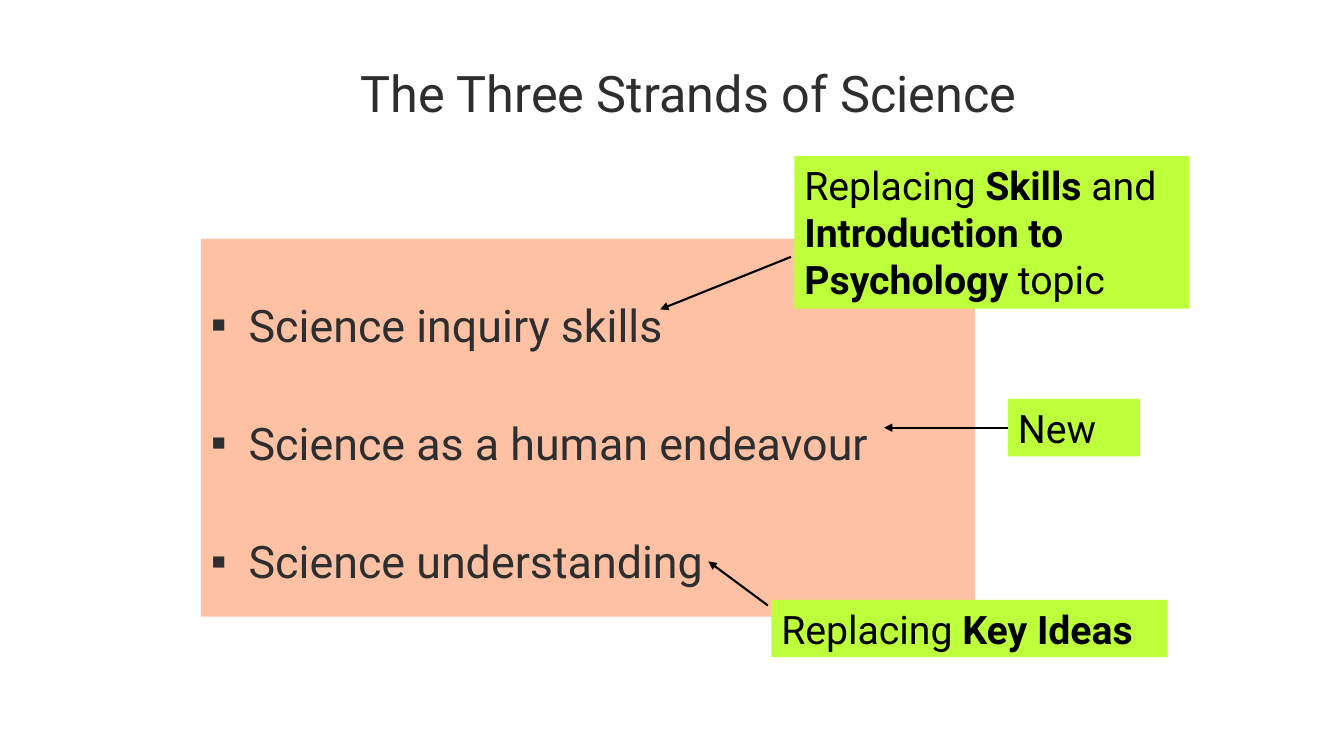
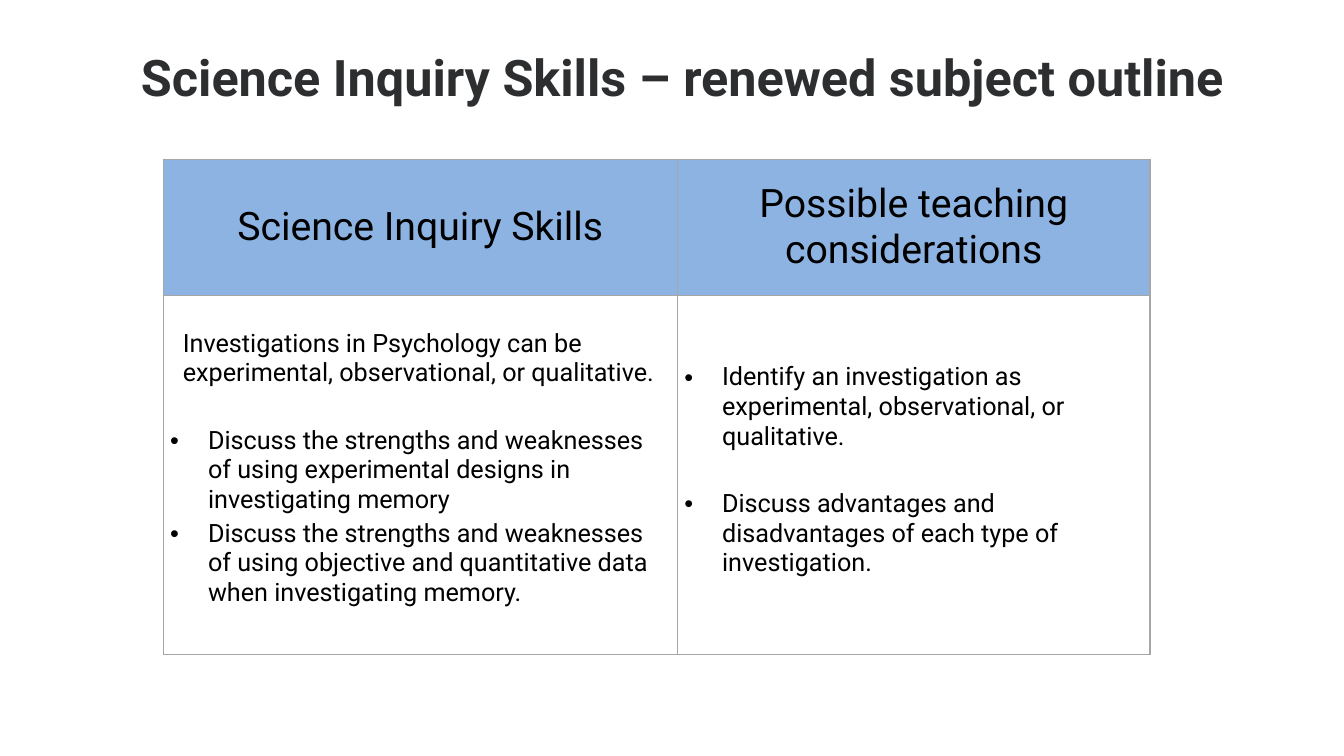
from lxml import etree
from pptx import Presentation
from pptx.dml.color import RGBColor
from pptx.enum.shapes import MSO_CONNECTOR, MSO_SHAPE
from pptx.enum.text import MSO_ANCHOR, MSO_AUTO_SIZE, PP_ALIGN
from pptx.oxml.ns import qn
from pptx.util import Pt

RECTANGLE = MSO_SHAPE.RECTANGLE
STRAIGHT = MSO_CONNECTOR.STRAIGHT
MIDDLE, TOP = MSO_ANCHOR.MIDDLE, MSO_ANCHOR.TOP
LEFT, CENTER = PP_ALIGN.LEFT, PP_ALIGN.CENTER
FIT_SHAPE = MSO_AUTO_SIZE.SHAPE_TO_FIT_TEXT
LEFT_SIDE = 1

FONT = "Roboto"
COLORS = {
    "heading": "2D2E2F",
    "text": "000000",
    "panel": "FFC1A3",
    "callout": "BDFF3B",
    "header": "8DB3E2",
    "border": "A6A6A6",
}
BULLET_INDENT = 27


def write(para, text, size, color, bullet=None, **formats):
    """Fill a paragraph; text between asterisks is bold."""
    if bullet:
        properties = para._p.get_or_add_pPr()
        properties.set("marL", str(Pt(BULLET_INDENT)))
        properties.set("indent", str(-Pt(BULLET_INDENT)))
        etree.SubElement(properties, qn("a:buFont"), typeface="Arial")
        etree.SubElement(properties, qn("a:buChar"), char=bullet)
    for name, value in formats.items():
        setattr(para, name, value)
    for number, part in enumerate(text.split("*")):
        if part:
            span = para.add_run()
            span.text = part
            span.font.name = FONT
            span.font.size = Pt(size)
            span.font.bold = number % 2 == 1
            span.font.color.rgb = RGBColor.from_string(COLORS[color])


def add_panel(page, left, top, width, height, color):
    panel = page.shapes.add_shape(RECTANGLE, Pt(left), Pt(top), Pt(width), Pt(height))
    panel.shadow.inherit = False
    panel.fill.solid()
    panel.fill.fore_color.rgb = RGBColor.from_string(COLORS[color])
    panel.line.fill.background()
    panel.text_frame.word_wrap = True
    panel.text_frame.vertical_anchor = TOP
    return panel


deck = Presentation()
deck.slide_width, deck.slide_height = Pt(960), Pt(540)

# Pages and titles
titles = [
    ("The Three Strands of Science", 72, 35, 840, CENTER),
    ("*Science Inquiry Skills – renewed subject outline*", 93.6, 23, 819, LEFT),
]
pages = []
for text, left, top, width, alignment in titles:
    page = deck.slides.add_slide(deck.slide_layouts[6])
    box = page.shapes.add_textbox(Pt(left), Pt(top), Pt(width), Pt(68))
    box.text_frame.word_wrap = True
    box.text_frame.vertical_anchor = MIDDLE
    write(box.text_frame.paragraphs[0], text, 36, "heading",
          alignment=alignment, line_spacing=0.9)
    pages.append(page)
strands_page, skills_page = pages

# Three strands
strands = ["Science inquiry skills", "Science as a human endeavour", "Science understanding"]
frame = add_panel(strands_page, 143.5, 170.5, 553, 270, "panel").text_frame
for number, strand in enumerate(strands):
    para = frame.add_paragraph() if number else frame.paragraphs[0]
    write(para, strand, 32, "heading", bullet="▪", alignment=LEFT,
          line_spacing=2.0, space_before=Pt(7.5 if number else 0))

# Callouts: text, position and size, arrow start (None: middle of left side), arrow end
callouts = [
    ("Replacing *Key Ideas*", (551, 428.5, 283, 41), (548.5, 432.5), (506, 401)),
    ("Replacing *Skills *and *Introduction to Psychology *topic",
     (567.5, 111.5, 282, 109), (565, 183.5), (471.5, 221)),
    ("New", (720, 285, 94.5, 41), None, (631.5, 305.5)),
]
for text, area, start, end in callouts:
    callout = add_panel(strands_page, *area, "callout")
    callout.text_frame.auto_size = FIT_SHAPE
    write(callout.text_frame.paragraphs[0], text, 28, "text", alignment=LEFT)
    begin = start or end
    arrow = strands_page.shapes.add_connector(
        STRAIGHT, Pt(begin[0]), Pt(begin[1]), Pt(end[0]), Pt(end[1]))
    if start is None:
        arrow.begin_connect(callout, LEFT_SIDE)
    arrow.line.color.rgb = RGBColor.from_string(COLORS["text"])
    arrow.line.width = Pt(1.5)
    etree.SubElement(arrow.line._get_or_add_ln(), qn("a:tailEnd"), type="triangle")
    etree.SubElement(arrow._element.spPr, qn("a:effectLst"))

# Skills table
column_widths = [367.2, 337.7]
row_heights = [97.2, 256.3]
table = skills_page.shapes.add_table(
    2, 2, Pt(116.6), Pt(113.8), Pt(sum(column_widths)), Pt(sum(row_heights))).table
table.first_row = table.horz_banding = False
for column, width in zip(table.columns, column_widths):
    column.width = Pt(width)
for row, height in zip(table.rows, row_heights):
    row.height = Pt(height)

for cell in table.iter_cells():
    cell.margin_left = cell.margin_right = Pt(5)
    cell.margin_top = cell.margin_bottom = Pt(3)
    cell.fill.background()
    properties = cell._tc.get_or_add_tcPr()
    for position, side in enumerate(["lnL", "lnR", "lnT", "lnB"]):
        border = etree.Element(qn(f"a:{side}"), w=str(Pt(1)))
        fill = etree.SubElement(border, qn("a:solidFill"))
        etree.SubElement(fill, qn("a:srgbClr"), val=COLORS["border"])
        properties.insert(position, border)

for column, heading in enumerate(["Science Inquiry Skills", "Possible teaching considerations"]):
    cell = table.cell(0, column)
    cell.fill.solid()
    cell.fill.fore_color.rgb = RGBColor.from_string(COLORS["header"])
    cell.vertical_anchor = MIDDLE
    write(cell.text_frame.paragraphs[0], heading, 28, "text", alignment=CENTER)

# Body cells: top margin, then text, bullet and space before of each paragraph
bodies = [
    (24, [
        ("Investigations in Psychology can be experimental, observational, or qualitative.",
         None, 0),
        ("Discuss the strengths and weaknesses of using experimental designs in "
         "investigating memory", "•", 27),
        ("Discuss the strengths and weaknesses of using objective and quantitative data "
         "when investigating memory.", "•", 3),
    ]),
    (48, [
        ("Identify an investigation as experimental, observational, or qualitative.", "•", 0),
        ("Discuss advantages and disadvantages of each type of investigation.", "•", 27),
    ]),
]
for column, (margin, items) in enumerate(bodies):
    cell = table.cell(1, column)
    cell.margin_top = Pt(margin)
    frame = cell.text_frame
    for number, (text, bullet, space) in enumerate(items):
        para = frame.add_paragraph() if number else frame.paragraphs[0]
        write(para, text, 18, "text", bullet=bullet, space_before=Pt(space))
        if not bullet:
            para._p.get_or_add_pPr().set("marL", str(Pt(9)))

deck.save("out.pptx")
